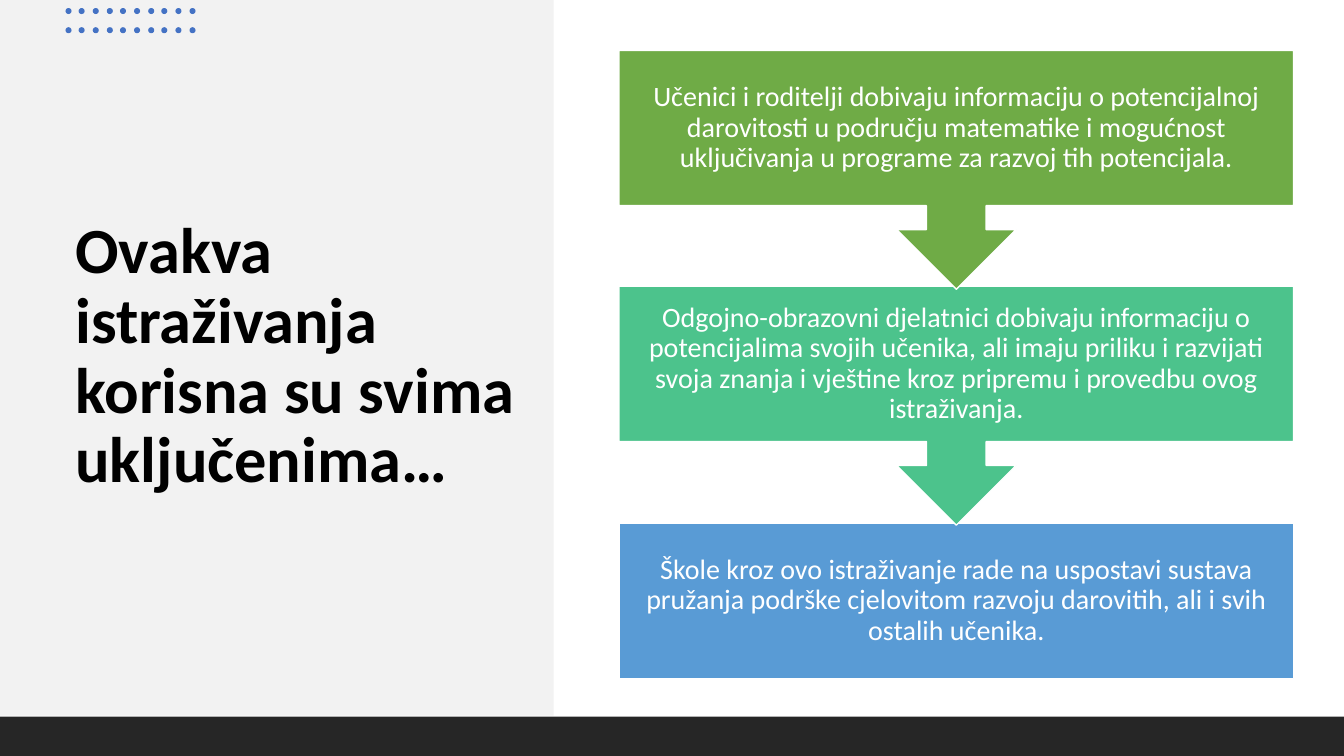
from pptx import Presentation
from pptx.dml.color import RGBColor
from pptx.enum.shapes import MSO_SHAPE
from pptx.enum.text import MSO_ANCHOR, PP_ALIGN
from pptx.util import Emu, Pt

SCALE = 9144  # EMU per px, 100 px to the inch


def px(n):
    return Emu(n * SCALE)


def color(code):
    return RGBColor.from_string(code)


class Deck:
    font = "Calibri"
    white, black = "FFFFFF", "000000"
    gray, dark, blue = "F2F2F2", "262626", "4472C4"

    def __init__(self, wide, high):
        self.prs = Presentation()
        self.prs.slide_width, self.prs.slide_height = px(wide), px(high)
        self.slide = self.prs.slides.add_slide(self.prs.slide_layouts[6])
        self.target = self.slide.shapes

    def group(self):
        """Send the next elements into a new group."""
        self.target = self.slide.shapes.add_group_shape().shapes

    def shape(self, kind, box, fill, line=None, turn=0, adjust=()):
        item = self.target.add_shape(kind, *map(px, box))
        item.shadow.inherit = False
        item.fill.solid()
        item.fill.fore_color.rgb = color(fill)
        if line:
            item.line.color.rgb = color(line)
            item.line.width = Pt(1)
        else:
            item.line.fill.background()
        item.rotation = turn
        for i, value in enumerate(adjust):
            item.adjustments[i] = value

    def text(self, words, box, size, tint, inset, align, bold=False):
        frame = self.target.add_textbox(*map(px, box)).text_frame
        across, down = map(px, inset)
        style = {
            "word_wrap": True, "vertical_anchor": MSO_ANCHOR.MIDDLE,
            "margin_left": across, "margin_right": across,
            "margin_top": down, "margin_bottom": down,
        }
        for name, value in style.items():
            setattr(frame, name, value)
        para = frame.paragraphs[0]
        para.alignment, para.line_spacing = align, 0.9
        run = para.add_run()
        run.text = words
        for name, value in {"name": self.font, "size": Pt(size), "bold": bold}.items():
            setattr(run.font, name, value)
        run.font.color.rgb = color(tint)


STEPS = [
    ("6FAB46", "Učenici i roditelji dobivaju informaciju o potencijalnoj darovitosti "
               "u području matematike i mogućnost uključivanja u programe za razvoj "
               "tih potencijala."),
    ("4CC38C", "Odgojno-obrazovni djelatnici dobivaju informaciju o potencijalima "
               "svojih učenika, ali imaju priliku i razvijati svoja znanja i vještine "
               "kroz pripremu i provedbu ovog istraživanja."),
    ("599BD5", "Škole kroz ovo istraživanje rade na uspostavi sustava pružanja podrške "
               "cjelovitom razvoju darovitih, ali i svih ostalih učenika."),
]


def main():
    deck = Deck(1333, 750)

    # Left panel and title
    deck.shape(MSO_SHAPE.RECTANGLE, (0, 0, 549, 710), deck.gray)
    deck.text("Ovakva istraživanja korisna su svima uključenima…",
              (65, 132, 464, 445), 46, deck.black, (10, 5), PP_ALIGN.LEFT, True)

    # Bottom bar
    deck.shape(MSO_SHAPE.RECTANGLE, (0, 711, 1333, 39), deck.dark)

    # Dot grid
    deck.group()
    for col in range(10):
        for top in (8, 27):
            deck.shape(MSO_SHAPE.OVAL, (65 + col * 123 // 9, top, 6, 6), deck.blue)

    # Steps, last one first so that each arrow lies over the next box
    deck.group()
    last = len(STEPS) - 1
    for i, (fill, words) in reversed(list(enumerate(STEPS))):
        left, top, wide, high = box = (614, 50 + i * 469 // 2, 669, 154)
        if i == last:
            deck.shape(MSO_SHAPE.RECTANGLE, box, fill, deck.white)
        else:
            deck.shape(MSO_SHAPE.UP_ARROW_CALLOUT, (left, top, wide, 237), fill,
                       deck.white, 180, (0.25, 0.25, 0.25, 0.65))
        deck.text(words, box, 20, deck.white, (16, 16), PP_ALIGN.CENTER)

    deck.prs.save("out.pptx")


if __name__ == "__main__":
    main()
